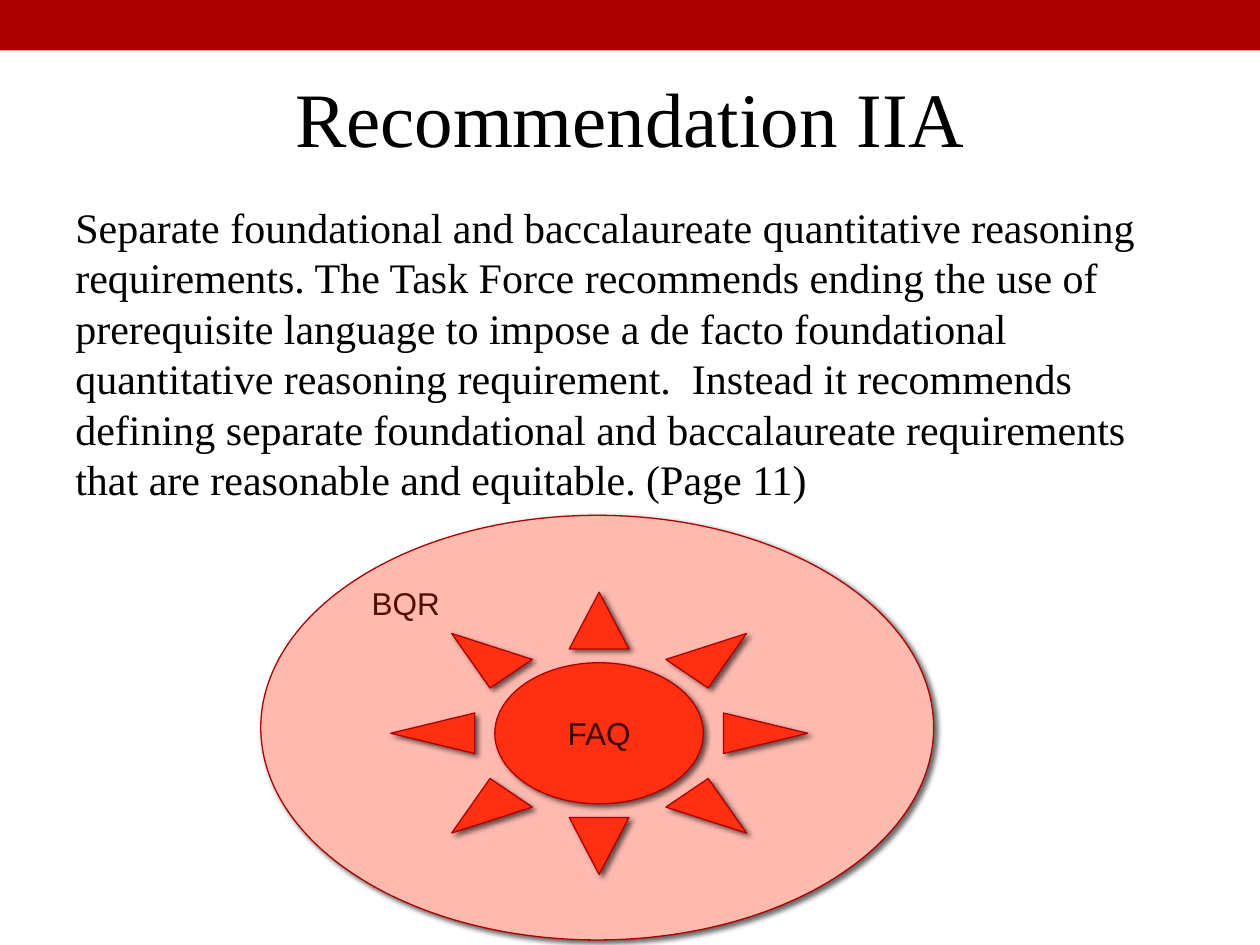
from lxml import etree
from pptx import Presentation
from pptx.dml.color import RGBColor
from pptx.enum.shapes import MSO_SHAPE
from pptx.enum.text import MSO_ANCHOR, PP_ALIGN
from pptx.oxml.ns import qn
from pptx.util import Inches, Pt

RECTANGLE, OVAL, SUN = MSO_SHAPE.RECTANGLE, MSO_SHAPE.OVAL, MSO_SHAPE.SUN
TOP, MIDDLE = MSO_ANCHOR.TOP, MSO_ANCHOR.MIDDLE
LEFT, CENTER = PP_ALIGN.LEFT, PP_ALIGN.CENTER

WIDTH, HEIGHT = 10, 7.5
MARGIN = WIDTH / 20
TITLE_TOP, BODY_TOP, BODY_BOTTOM = 0.3, 1.55, 6.5
DARK_RED, BLACK = "AD0101", "000000"
SERIF, SANS = "Times New Roman", "Arial"

TITLE = "Recommendation IIA"
BODY = (
    "Separate foundational and baccalaureate quantitative reasoning requirements. "
    "The Task Force recommends ending the use of prerequisite language to impose "
    "a de facto foundational quantitative reasoning requirement.  Instead it "
    "recommends defining separate foundational and baccalaureate requirements "
    "that are reasonable and equitable. (Page 11)"
)
# label, preset, box, fill, text colour, anchor, alignment
DIAGRAM = [
    ("BQR", OVAL, (2.07, 4.09, 5.34, 3.37), "FFBAB0", "560A00", TOP, LEFT),
    ("FAQ", SUN, (3.1, 4.7, 3.31, 2.24), "FF2F12", "3A0700", MIDDLE, CENTER),
]


def color(hex_code):
    return RGBColor.from_string(hex_code)


def write(shape, text, size, font, hex_code, anchor, align):
    frame = shape.text_frame
    frame.word_wrap = True
    frame.vertical_anchor = anchor
    paragraph = frame.paragraphs[0]
    paragraph.text = text
    paragraph.alignment = align
    paragraph.font.size = Pt(size)
    paragraph.font.name = font
    paragraph.font.color.rgb = color(hex_code)
    return paragraph


def add_filled(slide, preset, box, fill):
    shape = slide.shapes.add_shape(preset, *map(Inches, box))
    shape.shadow.inherit = False
    shape.fill.solid()
    shape.fill.fore_color.rgb = color(fill)
    shape.line.fill.background()
    return shape


def add_drop_shadow(shape):
    """Cast a 60% black shadow down and to the right."""
    effects = shape._element.spPr.find(qn("a:effectLst"))
    shadow = etree.SubElement(
        effects, qn("a:outerShdw"), blurRad=str(Pt(3)), dist=str(Pt(2)),
        dir=str(45 * 60000), algn="tl", rotWithShape="0")
    black = etree.SubElement(shadow, qn("a:srgbClr"), val=BLACK)
    etree.SubElement(black, qn("a:alpha"), val="60000")


def add_text(slide, top, bottom, *style):
    box = (MARGIN, top, WIDTH - 2 * MARGIN, bottom - top)
    return write(slide.shapes.add_textbox(*map(Inches, box)), *style)


def add_diagram_part(slide, label, preset, box, fill, text_color, anchor, align):
    shape = add_filled(slide, preset, box, fill)
    shape.line.color.rgb = color(DARK_RED)
    shape.line.width = Pt(0.75)
    add_drop_shadow(shape)
    write(shape, label, 18, SANS, text_color, anchor, align)


def main():
    deck = Presentation()
    deck.slide_width, deck.slide_height = Inches(WIDTH), Inches(HEIGHT)
    slide = deck.slides.add_slide(deck.slide_layouts[6])
    outer, inner = DIAGRAM

    add_filled(slide, RECTANGLE, (0, 0, WIDTH, 0.4), DARK_RED)
    add_diagram_part(slide, *outer)
    add_text(slide, TITLE_TOP, BODY_TOP, TITLE, 44, SERIF, BLACK, MIDDLE, CENTER)
    body = add_text(slide, BODY_TOP, BODY_BOTTOM, BODY, 24, SERIF, BLACK, TOP, LEFT)
    body.line_spacing = Pt(28.8)
    body.space_before = Pt(2)
    add_diagram_part(slide, *inner)

    deck.save("out.pptx")


if __name__ == "__main__":
    main()
